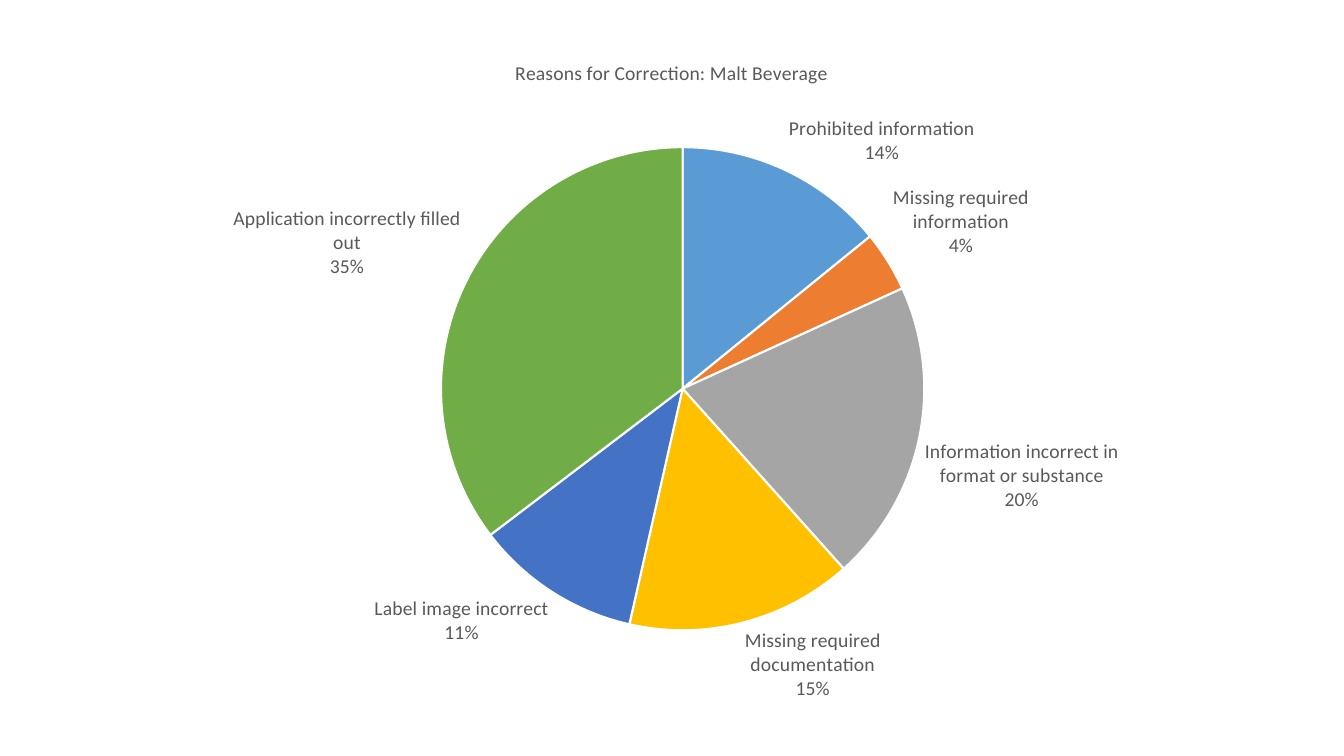
import pptx
import pptx.chart.data
import pptx.dml.color
import pptx.enum.chart
import pptx.oxml
import pptx.oxml.ns
import pptx.util
from pptx.util import Inches

COLOURS = {
    "Prohibited information": "5B9BD5",
    "Missing required information": "ED7D31",
    "Information incorrect in format or substance": "A5A5A5",
    "Missing required documentation": "FFC000",
    "Label image incorrect": "4472C4",
    "Application incorrectly filled out": "70AD47",
    "text": "595959",
    "divider": "FFFFFF",
}
REASONS = {
    "Prohibited information": 14,
    "Missing required information": 4,
    "Information incorrect in format or substance": 20,
    "Missing required documentation": 15,
    "Label image incorrect": 11,
    "Application incorrectly filled out": 35,
}


def colour(name):
    return pptx.dml.color.RGBColor.from_string(COLOURS[name])


def style_font(font):
    font.name = "Calibri"
    font.size = pptx.util.Pt(14)
    font.bold = False
    font.color.rgb = colour("text")


def manual_layout(parent, before, **fractions):
    """Place a chart part by fractions of the chart's size."""
    for old in parent.findall(pptx.oxml.ns.qn("c:layout")):
        parent.remove(old)
    target = '<c:layoutTarget val="inner"/>' if "w" in fractions else ""
    modes = '<c:xMode val="edge"/><c:yMode val="edge"/>'
    sizes = "".join(f'<c:{key} val="{value}"/>' for key, value in fractions.items())
    layout = pptx.oxml.parse_xml(
        f'<c:layout {pptx.oxml.ns.nsdecls("c")}><c:manualLayout>'
        f"{target}{modes}{sizes}</c:manualLayout></c:layout>")
    parent.find(pptx.oxml.ns.qn(before)).addprevious(layout)


def add_correction_pie(slide, left, top, width, height):
    data = pptx.chart.data.CategoryChartData()
    data.categories = list(REASONS)
    data.add_series("Series 1", list(REASONS.values()))
    chart = slide.shapes.add_chart(
        pptx.enum.chart.XL_CHART_TYPE.PIE, Inches(left), Inches(top),
        Inches(width), Inches(height), data).chart
    chart.has_legend = False
    style_font(chart.font)

    # Title
    chart.has_title = True
    heading = chart.chart_title.text_frame.paragraphs[0].add_run()
    heading.text = "Reasons for Correction: Malt Beverage"
    style_font(heading.font)
    chart.chart_title.include_in_layout = False
    manual_layout(chart.chart_title._element, "c:overlay", x=0.37, y=0.03)

    # Slices
    pie = chart.plots[0]
    pie.vary_by_categories = True
    for index, reason in enumerate(REASONS):
        piece = pie.series[0].points[index].format
        piece.fill.solid()
        piece.fill.fore_color.rgb = colour(reason)
        piece.line.color.rgb = colour("divider")
        piece.line.width = pptx.util.Pt(1.5)
    diameter = 4.83
    manual_layout(pie._element.getparent(), "c:pieChart", x=0.31, y=0.16,
                  w=round(diameter / width, 2), h=round(diameter / height, 2))

    # Labels
    labels = pie.series[0].data_labels
    labels.show_category_name = True
    labels.show_percentage = True
    labels.show_value = False
    labels.show_legend_key = False
    labels.number_format = "0%"
    labels.number_format_is_linked = False
    labels.position = pptx.enum.chart.XL_LABEL_POSITION.OUTSIDE_END
    style_font(labels.font)
    separator = pptx.oxml.parse_xml(
        f'<c:separator {pptx.oxml.ns.nsdecls("c")}>\n</c:separator>')
    bubble = labels._element.find(pptx.oxml.ns.qn("c:showBubbleSize"))
    if bubble is None:
        labels._element.find(pptx.oxml.ns.qn("c:showPercent")).addnext(separator)
    else:
        bubble.addnext(separator)


def main():
    deck = pptx.Presentation()
    deck.slide_width = Inches(13.33)
    deck.slide_height = Inches(7.5)
    slide = deck.slides.add_slide(deck.slide_layouts[6])
    add_correction_pie(slide, 0.75, 0.35, 11.69, 6.81)
    deck.save("out.pptx")


if __name__ == "__main__":
    main()
